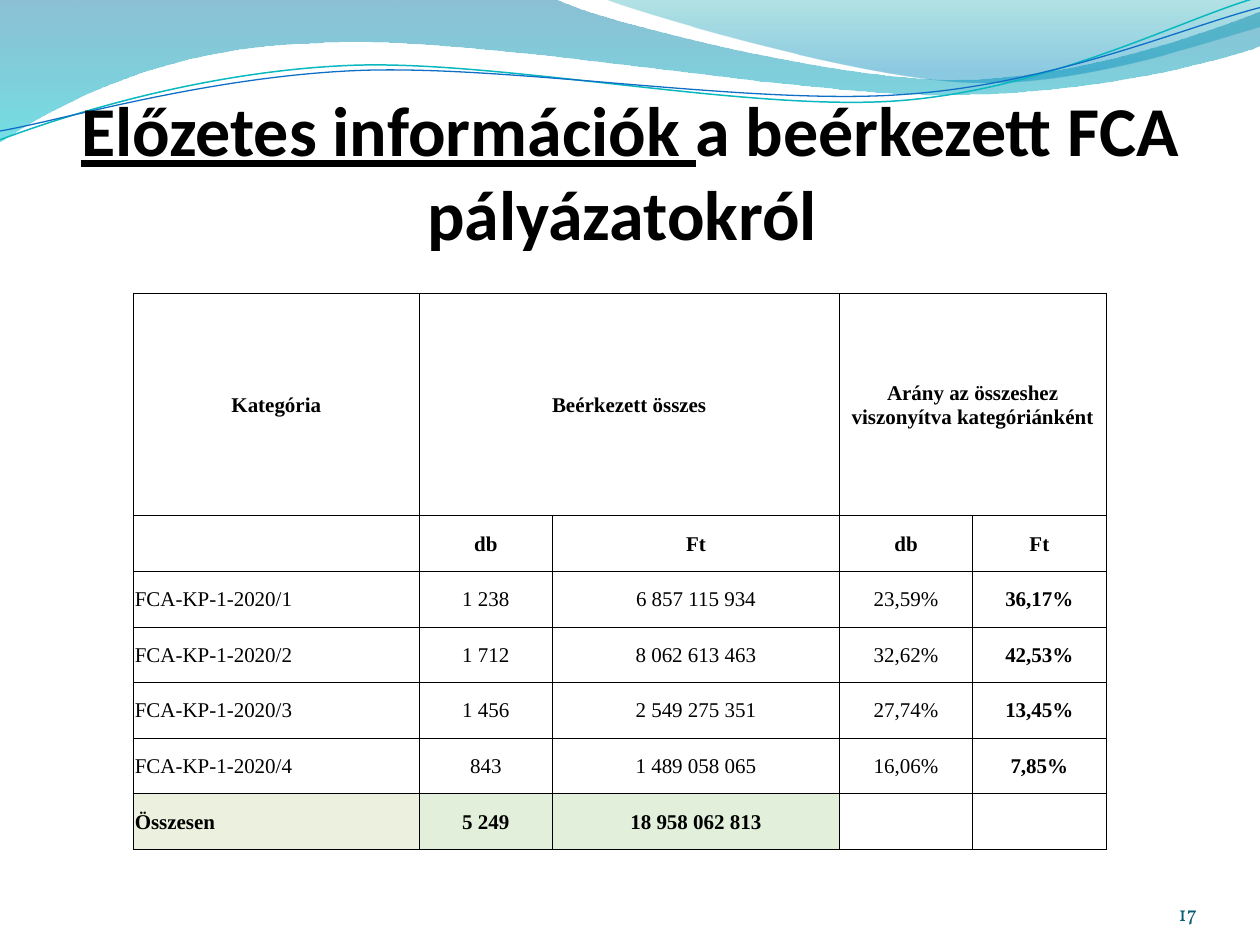
from math import cos, radians, sin

from lxml.etree import SubElement
from pptx import Presentation
from pptx.dml.color import RGBColor
from pptx.enum.text import MSO_ANCHOR, MSO_AUTO_SIZE, PP_ALIGN
from pptx.oxml import parse_xml
from pptx.oxml.ns import nsdecls, qn
from pptx.util import Inches, Pt


def color(value):
    return RGBColor.from_string(value)


def add_run(para, text, font, size, bold=False, tint="000000"):
    span = para.add_run()
    span.text = text
    span.font.name = font
    span.font.size = Pt(size)
    span.font.bold = bold
    span.font.color.rgb = color(tint)
    return span


deck = Presentation()
deck.slide_width, deck.slide_height = Inches(10), Inches(7.5)
page = deck.slides.add_slide(deck.slide_layouts[5])

# Title
title = page.shapes.title
title.left, title.top = Inches(0.5), Inches(0.77)
title.width, title.height = Inches(9), Inches(1.25)
frame = title.text_frame
frame.word_wrap = True
frame.auto_size = MSO_AUTO_SIZE.NONE
frame.vertical_anchor = MSO_ANCHOR.BOTTOM
frame.margin_left = frame.margin_right = frame.margin_bottom = 0
frame.margin_top = Inches(0.05)
para = frame.paragraphs[0]
para.alignment = PP_ALIGN.CENTER
add_run(para, "Előzetes információk ", "Calibri", 40, True).font.underline = True
add_run(para, "a beérkezett FCA pályázatokról ", "Calibri", 40, True)

# Waves behind the title: a 2-number step is a line, a 6-number step a Bézier curve.
# Each has a box, a rotation and steps as they lie on the slide after rotation.
# Bands have gradient stops (position, colour, opacity); lines have (colour, width).
waves = [
    ((-0.01, -0.01, 10.02, 1.14), 0,
     [(0, 0), (4.4, -0.01), (4.76, 0.17, 6.64, 0.63, 7.58, 0.63),
      (8.53, 0.63, 9.58, 0.26, 10, 0.09), (10.01, 0.36),
      (9.83, 0.44, 8.7, 0.76, 7.46, 0.75), (6.22, 0.75, 3.82, 0.28, 2.57, 0.34),
      (1.29, 0.36, 0.46, 0.83, -0.01, 1.13), (0, 0)],
     [(0, "0074A1", 45), (100, "00C6CF", 55)], None),
    ((4.79, -0.01, 5.21, 0.7), 0,
     [(4.79, -0.01), (5.09, 0.11, 6.82, 0.62, 7.69, 0.65),
      (8.56, 0.69, 9.61, 0.32, 10, 0.21), (10, 0), (4.79, -0.01)],
     [(0, "00A1A9", 30), (80, "008BBF", 45)], None),
    ((-0.02, 0.22, 10.02, 0.71), -2.7,
     [(0, 1.11), (0.48, 0.93, 1.58, 0.57, 2.77, 0.52),
      (3.95, 0.47, 5.93, 0.89, 7.13, 0.8), (8.33, 0.71, 9.38, 0.15, 9.98, -0.02)],
     None, ("0AB8BF", 0.85)),
    ((-0.02, 0.3, 10.03, 0.58), -2.7,
     [(0, 1.04), (0.47, 0.96, 1.64, 0.61, 2.83, 0.56),
      (4.03, 0.51, 5.97, 0.84, 7.17, 0.75), (8.36, 0.67, 9.41, 0.21, 10, 0.06)],
     None, ("0F6FC6", 0.75)),
]
for (left, top, width, height), turn, steps, stops, stroke in waves:
    corners = [(Inches(step[-2]), Inches(step[-1])) for step in steps]
    builder = page.shapes.build_freeform(*corners[0])
    builder.add_line_segments(corners[1:], close=stops is not None)
    wave = builder.convert_to_shape()
    wave.left, wave.top = Inches(left), Inches(top)
    wave.width, wave.height = Inches(width), Inches(height)
    wave.rotation = turn
    wave.shadow.inherit = False
    wave.fill.background()
    properties = wave.element.spPr

    # Redraw the outline inside the box, with true curves
    outline = next(properties.iter(qn("a:path")))
    outline.set("w", str(Inches(width)))
    outline.set("h", str(Inches(height)))
    for part in list(outline):
        outline.remove(part)
    angle = radians(-turn)
    for i, step in enumerate(steps):
        kind = "moveTo" if i == 0 else "lnTo" if len(step) == 2 else "cubicBezTo"
        part = SubElement(outline, qn(f"a:{kind}"))
        for x, y in zip(step[::2], step[1::2]):
            dx, dy = x - left - width / 2, y - top - height / 2
            SubElement(part, qn("a:pt"),
                       x=str(Inches(width / 2 + dx * cos(angle) - dy * sin(angle))),
                       y=str(Inches(height / 2 + dx * sin(angle) + dy * cos(angle))))
    if stops:
        SubElement(outline, qn("a:close"))
        wave.line.fill.background()
        stop_xml = "".join(
            f'<a:gs pos="{place * 1000}"><a:srgbClr val="{tint}">'
            f'<a:alpha val="{opacity * 1000}"/></a:srgbClr></a:gs>'
            for place, tint, opacity in stops)
        gradient = parse_xml(f'<a:gradFill {nsdecls("a")}><a:gsLst>{stop_xml}</a:gsLst>'
                             '<a:lin ang="5400000" scaled="0"/></a:gradFill>')
        properties.replace(properties.find(qn("a:noFill")), gradient)
    else:
        wave.line.color.rgb = color(stroke[0])
        wave.line.width = Pt(stroke[1])
    title.element.addprevious(wave.element)

# Table
rows = [
    ["Kategória", "Beérkezett összes", "", "Arány az összeshez viszonyítva kategóriánként", ""],
    ["", "db", "Ft", "db", "Ft"],
    ["FCA-KP-1-2020/1", "1 238", "6 857 115 934", "23,59%", "36,17%"],
    ["FCA-KP-1-2020/2", "1 712", "8 062 613 463", "32,62%", "42,53%"],
    ["FCA-KP-1-2020/3", "1 456", "2 549 275 351", "27,74%", "13,45%"],
    ["FCA-KP-1-2020/4", "843", "1 489 058 065", "16,06%", "7,85%"],
    ["Összesen", "5 249", "18 958 062 813", "", ""],
]
table_width, table_height = 7.72, 4.41
column_shares = [2.27, 1.06, 2.28, 1.06, 1.06]
row_shares = [4] + [1] * 6
total_fills = ["EBF1DE", "E2EFDA", "E2EFDA", None, None]
table = page.shapes.add_table(len(rows), len(column_shares), Inches(1.06), Inches(2.33),
                              Inches(table_width), Inches(table_height)).table
table.first_row = table.horz_banding = False
for column, share in zip(table.columns, column_shares):
    column.width = Inches(table_width * share / sum(column_shares))
for row, share in zip(table.rows, row_shares):
    row.height = Inches(table_height * share / sum(row_shares))
for first in (1, 3):
    table.cell(0, first).merge(table.cell(0, first + 1))

last = len(rows) - 1
for r, texts in enumerate(rows):
    for c, text in enumerate(texts):
        cell = table.cell(r, c)
        cell.vertical_anchor = MSO_ANCHOR.MIDDLE
        cell.margin_left = cell.margin_right = cell.margin_top = Inches(0.01)
        cell.margin_bottom = 0
        properties = cell._tc.get_or_add_tcPr()
        for side in ("lnL", "lnR", "lnT", "lnB"):
            border = SubElement(properties, qn(f"a:{side}"), w=str(Pt(0.5)))
            SubElement(SubElement(border, qn("a:solidFill")), qn("a:srgbClr"), val="000000")
        header_fill = "FFFFFF" if r < 2 and (r, c) != (0, 0) else None
        fill = total_fills[c] if r == last else header_fill
        if fill:
            cell.fill.solid()
            cell.fill.fore_color.rgb = color(fill)
        else:
            cell.fill.background()
        if text:
            para = cell.text_frame.paragraphs[0]
            para.alignment = PP_ALIGN.LEFT if c == 0 and r > 1 else PP_ALIGN.CENTER
            add_run(para, text, "Times New Roman", 12, r < 2 or r == last or c == 4)

# Page number
box = page.shapes.add_textbox(Inches(8.67), Inches(6.95), Inches(0.83), Inches(0.4))
frame = box.text_frame
frame.word_wrap = True
frame.vertical_anchor = MSO_ANCHOR.BOTTOM
frame.margin_left = frame.margin_right = frame.margin_top = frame.margin_bottom = 0
para = frame.paragraphs[0]
para.alignment = PP_ALIGN.RIGHT
add_run(para, "17", "Vollkorn", 12, tint="045D75")

deck.save("out.pptx")
